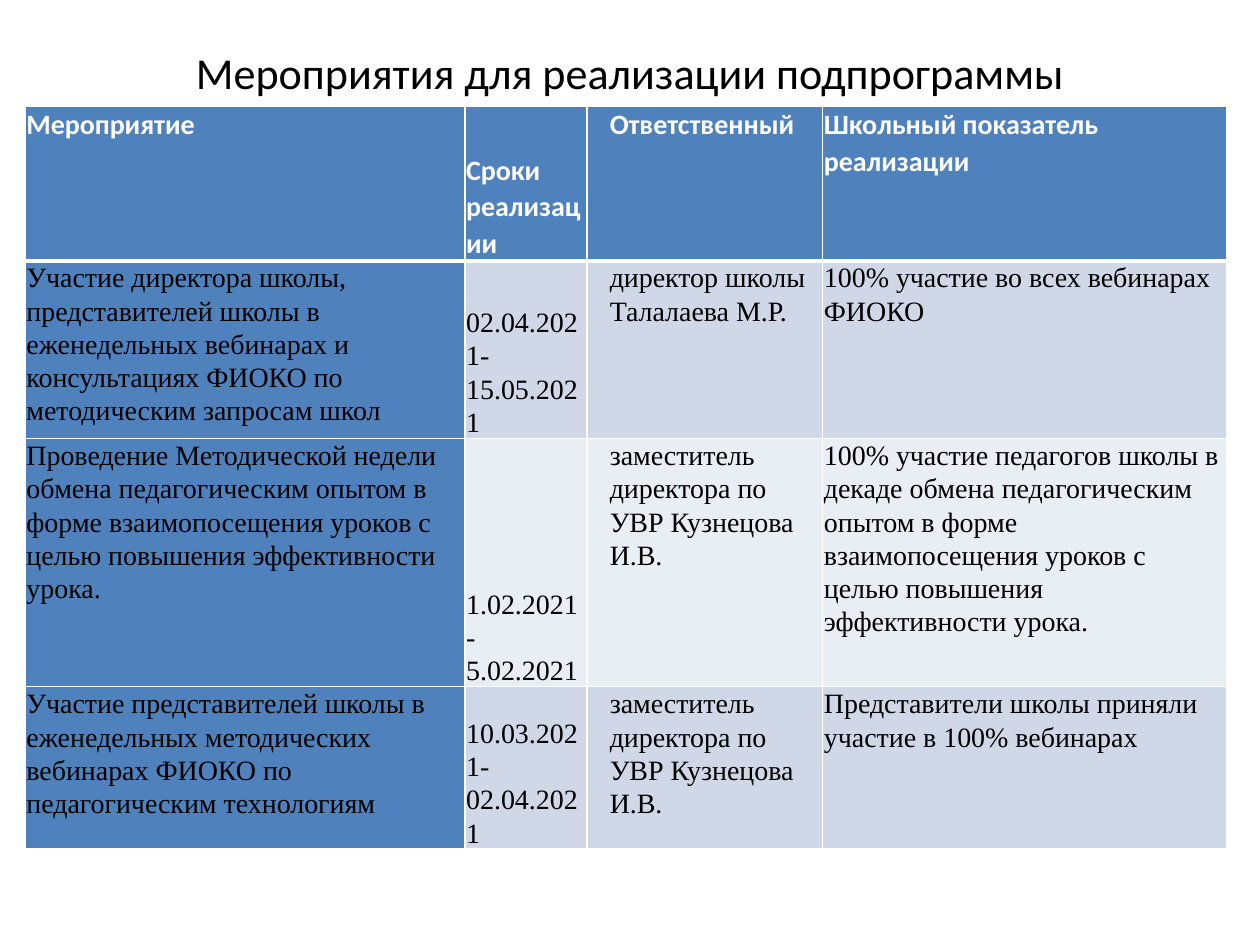
from pptx import Presentation
from pptx.dml.color import RGBColor
from pptx.enum.text import MSO_ANCHOR, MSO_AUTO_SIZE, PP_ALIGN
from pptx.oxml import parse_xml
from pptx.oxml.ns import nsdecls
from pptx.util import Inches, Pt

BLACK = RGBColor(0x00, 0x00, 0x00)
WHITE = RGBColor(0xFF, 0xFF, 0xFF)
BLUE = RGBColor(0x4F, 0x81, 0xBD)
BANDS = (RGBColor(0xD0, 0xD8, 0xE8), RGBColor(0xE9, 0xED, 0xF4))

TITLE = "Мероприятия для реализации подпрограммы"
DEPUTY = "заместитель директора по УВР Кузнецова И.В."
HEADER = ("Мероприятие", "Сроки\nреализации", "Ответственный",
          "Школьный показатель реализации")
EVENTS = [
    ("Участие директора школы, представителей школы в еженедельных вебинарах "
     "и консультациях ФИОКО по методическим запросам школ",
     "02.04.2021-\n15.05.2021",
     "директор школы Талалаева М.Р.",
     "100% участие во всех вебинарах ФИОКО"),
    ("Проведение Методической недели обмена педагогическим опытом в форме "
     "взаимопосещения уроков с целью повышения эффективности урока.",
     "1.02.2021-\n5.02.2021",
     DEPUTY,
     "100% участие педагогов школы в декаде обмена педагогическим опытом в форме "
     "взаимопосещения уроков с целью повышения эффективности урока."),
    ("Участие представителей школы в еженедельных методических вебинарах ФИОКО "
     "по педагогическим технологиям",
     "10.03.2021-\n02.04.2021",
     DEPUTY,
     "Представители школы приняли участие в 100% вебинарах"),
]
COLUMN_WIDTHS = (3.49, 0.97, 1.87, 3.21)
ROW_HEIGHTS = (1.23, 1.41, 1.97, 1.29)
DATES, PERSON = 1, 2


def write(frame, text, size, font="Calibri", color=BLACK, bold=False,
          align=PP_ALIGN.LEFT, spacing=None, indent=0):
    frame.word_wrap = True
    frame.text = text
    for paragraph in frame.paragraphs:
        paragraph.alignment = align
        paragraph.line_spacing = spacing
        if indent:
            paragraph._p.get_or_add_pPr().set("marL", str(Inches(indent)))
        for run in paragraph.runs:
            run.font.name, run.font.size, run.font.bold = font, Pt(size), bold
            run.font.color.rgb = color


def add_borders(cell, widths):
    properties = cell._tc.get_or_add_tcPr()
    for position, (side, width) in enumerate(zip("LRTB", widths)):
        properties.insert(position, parse_xml(
            f'<a:ln{side} {nsdecls("a")} w="{Pt(width)}"><a:solidFill>'
            f'<a:srgbClr val="{WHITE}"/></a:solidFill></a:ln{side}>'))


def fill_cell(cell, text, row, column):
    is_header = row == 0
    cell.margin_left = cell.margin_right = Inches(0.01)
    cell.margin_top = cell.margin_bottom = 0
    cell.vertical_anchor = MSO_ANCHOR.BOTTOM if column == DATES else MSO_ANCHOR.TOP
    cell.fill.solid()
    cell.fill.fore_color.rgb = BLUE if is_header or column == 0 else BANDS[(row - 1) % 2]
    add_borders(cell, (1, 1, 3 if row == 1 else 1, 3 if is_header else 1))
    write(cell.text_frame, text, 16, spacing=1.07, bold=is_header,
          font="Calibri" if is_header else "Times New Roman",
          color=WHITE if is_header else BLACK,
          indent=0.17 if column == PERSON else 0)


def main():
    deck = Presentation()
    deck.slide_width, deck.slide_height = Inches(10), Inches(7.5)
    slide = deck.slides.add_slide(deck.slide_layouts[5])

    title = slide.shapes.title
    title.left, title.top = Inches(0.5), Inches(0.3)
    title.width, title.height = Inches(9), Inches(0.54)
    title.text_frame.auto_size = MSO_AUTO_SIZE.NONE
    title.text_frame.vertical_anchor = MSO_ANCHOR.MIDDLE
    write(title.text_frame, TITLE, 25.2, align=PP_ALIGN.CENTER)

    rows = [HEADER, *EVENTS]
    plan = slide.shapes.add_table(
        len(rows), len(HEADER), Inches(0.2), Inches(0.84),
        Inches(sum(COLUMN_WIDTHS)), Inches(sum(ROW_HEIGHTS))).table
    plan.first_col = True
    for column, width in zip(plan.columns, COLUMN_WIDTHS):
        column.width = Inches(width)
    for row, height in zip(plan.rows, ROW_HEIGHTS):
        row.height = Inches(height)
    for r, texts in enumerate(rows):
        for c, text in enumerate(texts):
            fill_cell(plan.cell(r, c), text, r, c)
    plan.cell(0, DATES).text_frame.paragraphs[-1].alignment = PP_ALIGN.JUSTIFY

    deck.save("out.pptx")


if __name__ == "__main__":
    main()
